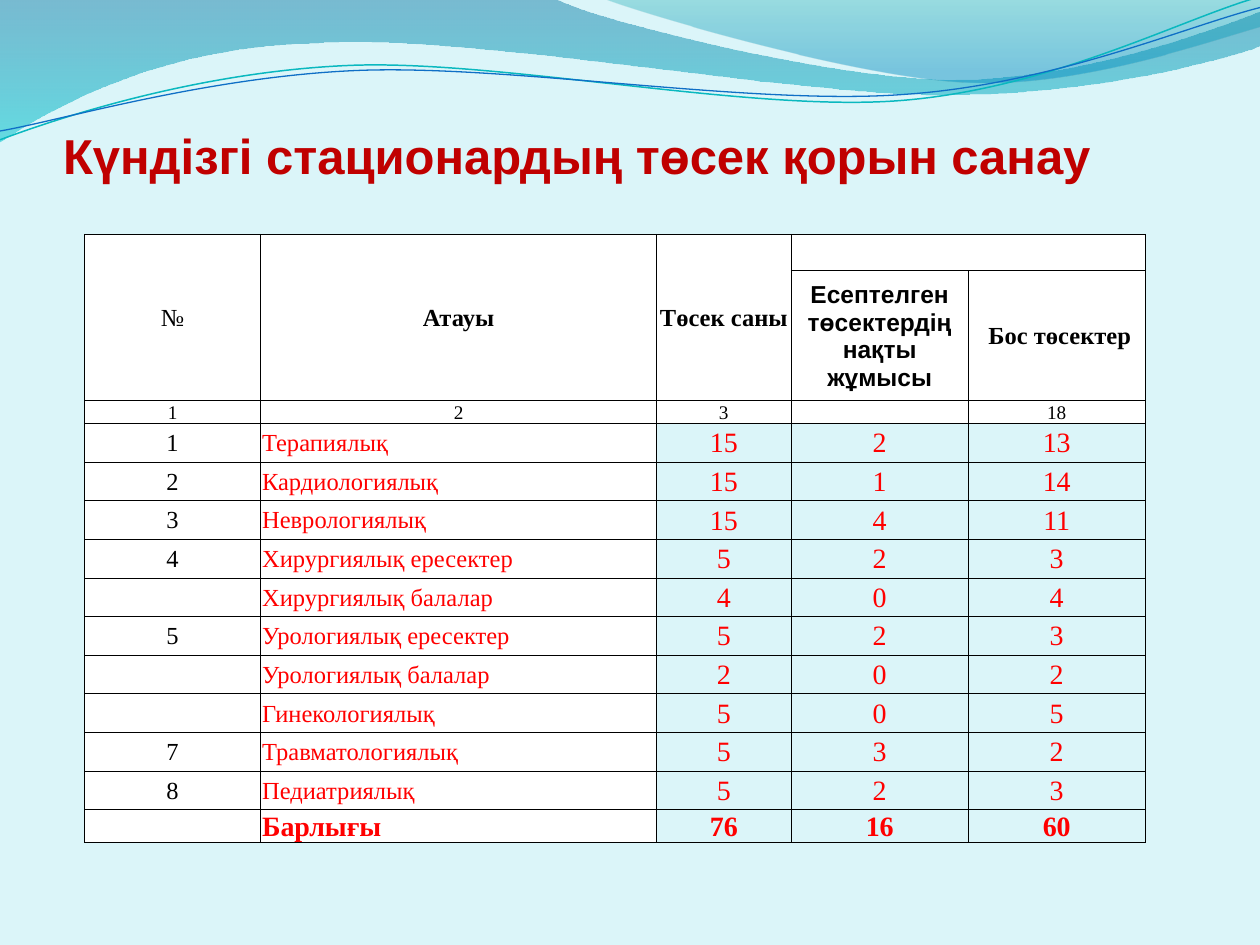
"""Build the slide that counts the bed stock of a day hospital."""
from lxml.etree import SubElement
from pptx import Presentation
from pptx.dml.color import RGBColor as Rgb
from pptx.enum.text import MSO_ANCHOR as Anchor, PP_ALIGN as Align
from pptx.oxml.ns import qn
from pptx.util import Inches, Pt

COLORS = {
    "page": "DBF5F9", "white": "FFFFFF", "ink": "000000", "title": "C00000", "red": "FF0000",
    "deep": "0074A1", "aqua": "00C6CF", "teal": "00A1A9", "sky": "008BBF",
    "teal line": "0AB8BF", "blue line": "0F6FC6",
}
SERIF, SANS = "Times New Roman", "Arial"
GRID_COLUMNS, GRID_ROWS = 100, 75

LEFT_WAVE = [
    (0, 0), (44, -0.1), (47.6, 1.7, 66.4, 6.3, 75.8, 6.3), (85.3, 6.3, 95.8, 2.6, 100, 0.9),
    (100.1, 3.6), (98.3, 4.4, 87, 7.6, 74.6, 7.5), (62.2, 7.5, 38.2, 2.8, 25.7, 3.4),
    (12.9, 3.6, 4.6, 8.3, -0.1, 11.3),
]
RIGHT_WAVE = [
    (47.9, -0.1), (50.9, 1.1, 68.2, 6.2, 76.9, 6.5), (85.6, 6.9, 96.1, 3.2, 100, 2.1), (100, 0),
]
TEAL_CURVE = [
    (0, 11.1), (4.8, 9.3, 15.8, 5.7, 27.7, 5.2), (39.5, 4.7, 59.3, 8.9, 71.3, 8),
    (83.3, 7.1, 93.8, 1.5, 99.8, -0.2),
]
BLUE_CURVE = [
    (0, 10.4), (4.7, 9.6, 16.4, 6.1, 28.3, 5.6), (40.3, 5.1, 59.7, 8.4, 71.7, 7.5),
    (83.6, 6.7, 94.1, 2.1, 100, 0.6),
]

HEADINGS = [
    ["№", "Атауы", "Төсек саны ", "", ""],
    ["", "", "", "Есептелген төсектердің нақты жұмысы", " Бос төсектер"],
    ["1", "2", "3", "", "18"],
]
WARDS = [
    ["1", "Терапиялық", "15", "2", "13"],
    ["2", "Кардиологиялық", "15", "1", "14"],
    ["3", "Неврологиялық", "15", "4", "11"],
    ["4", "Хирургиялық ересектер", "5", "2", "3"],
    ["", "Хирургиялық балалар", "4", "0", "4"],
    ["5", "Урологиялық ересектер", "5", "2", "3"],
    ["", "Урологиялық балалар", "2", "0", "2"],
    ["", "Гинекологиялық", "5", "0", "5"],
    ["7", "Травматологиялық", "5", "3", "2"],
    ["8", "Педиатриялық", "5", "2", "3"],
]
TOTAL = ["", "Барлығы", "76", "16", "60"]
TABLE_ROWS = HEADINGS + WARDS + [TOTAL]
NUMBER_ROW, FIRST_WARD, TOTAL_ROW = 2, len(HEADINGS), len(TABLE_ROWS) - 1
COLUMN_WIDTHS = [14, 31.4, 10.7, 14.05, 14.05]
ROW_HEIGHTS = [2.9, 10.3, 1.8] + [3.07] * len(WARDS) + [2.5]


def bed_style(row, column):
    """Return size, font, colour and weight for one cell of the bed table."""
    if row < NUMBER_ROW:
        return 14, SANS if (row, column) == (1, 3) else SERIF, "ink", column > 0
    if row == NUMBER_ROW:
        return 11, SERIF, "ink", False
    big = column > 1 or (row == TOTAL_ROW and column == 1)
    return 16 if big else 14, SERIF, "red" if column else "ink", row == TOTAL_ROW


class Slide:
    """Hold the style and the current slide, measured on a grid of columns and rows."""

    def __init__(self, deck):
        self.page = deck.slides.add_slide(deck.slide_layouts[5])
        self.column = deck.slide_width / GRID_COLUMNS
        self.row = deck.slide_height / GRID_ROWS
        self.page.background.fill.solid()
        self.page.background.fill.fore_color.rgb = self.color("page")

    def color(self, name):
        """Look up a named colour."""
        return Rgb.from_string(COLORS[name])

    def box(self, left, top, width, height):
        """Turn grid units into lengths."""
        return (round(left * self.column), round(top * self.row),
                round(width * self.column), round(height * self.row))

    def style(self, paragraph, size, font, color, bold):
        """Format every run of a paragraph."""
        for span in paragraph.runs:
            span.font.size, span.font.name, span.font.bold = Pt(size), font, bold
            span.font.color.rgb = self.color(color)

    def outline(self, segments, closed):
        """Draw a freeform from lines (two numbers) and cubic curves (six numbers)."""
        points = [(segment[i] * self.column, segment[i + 1] * self.row)
                  for segment in segments for i in range(0, len(segment), 2)]
        builder = self.page.shapes.build_freeform(*points[0])
        builder.add_line_segments(points[1:], close=closed)
        shape = builder.convert_to_shape()
        shape.shadow.inherit = False
        lines = shape._element.spPr.iter(qn("a:lnTo"))
        lines = iter(list(lines))
        for segment in segments[1:]:
            group = [next(lines) for _ in range(len(segment) // 2)]
            if len(group) == 3:
                bend = SubElement(group[0].getparent(), qn("a:cubicBezTo"))
                group[0].addprevious(bend)
                for line in group:
                    bend.append(line[0])
                    line.getparent().remove(line)
        return shape

    def wave(self, segments, stops):
        """Draw a closed wave with a see-through vertical gradient."""
        shape = self.outline(segments, True)
        shape.line.fill.background()
        shape.fill.gradient()
        shape.fill.gradient_angle = 270
        for stop, (position, color, _) in zip(shape.fill.gradient_stops, stops):
            stop.position, stop.color.rgb = position, self.color(color)
        for paint, (_, _, opacity) in zip(shape._element.spPr.iter(qn("a:srgbClr")), stops):
            SubElement(paint, qn("a:alpha"), val=str(opacity * 1000))

    def curve(self, segments, color, width):
        """Draw an open curved line."""
        shape = self.outline(segments, False)
        shape.fill.background()
        shape.line.color.rgb, shape.line.width = self.color(color), Pt(width)

    def title(self, text, place):
        """Fill and place the title in front of the waves."""
        box = self.page.shapes.title
        self.page.shapes._spTree.append(box._element)
        box.left, box.top, box.width, box.height = self.box(*place)
        frame = box.text_frame
        frame.text, frame.vertical_anchor, frame.word_wrap = text, Anchor.BOTTOM, True
        frame.margin_left = frame.margin_right = frame.margin_bottom = 0
        frame.margin_top = Inches(0.05)
        frame.paragraphs[0].alignment = Align.LEFT
        self.style(frame.paragraphs[0], 28, SANS, "title", True)

    def border(self, cell, width):
        """Draw a thin line on all four sides of a cell."""
        for side in ("lnL", "lnR", "lnT", "lnB"):
            line = SubElement(cell._tc.get_or_add_tcPr(), qn(f"a:{side}"), w=str(Pt(width)))
            SubElement(SubElement(line, qn("a:solidFill")), qn("a:srgbClr"), val=COLORS["ink"])

    def cell(self, cell, text, look, align, filled):
        """Fill and format one table cell."""
        self.border(cell, 0.5)
        cell.margin_left = cell.margin_right = cell.margin_top = Inches(0.01)
        cell.margin_bottom = 0
        cell.text_frame.text, cell.vertical_anchor = text, Anchor.MIDDLE
        paragraph = cell.text_frame.paragraphs[0]
        paragraph.alignment = align
        self.style(paragraph, *look)
        if not text:
            end = SubElement(paragraph._p, qn("a:endParaRPr"), sz=str(look[0] * 100))
            SubElement(end, qn("a:latin"), typeface=look[1])
        if filled:
            cell.fill.solid()
            cell.fill.fore_color.rgb = self.color("white")
        else:
            cell.fill.background()

    def bed_table(self, left, top):
        """Draw the table of wards and beds."""
        place = self.box(left, top, sum(COLUMN_WIDTHS), sum(ROW_HEIGHTS))
        table = self.page.shapes.add_table(len(TABLE_ROWS), len(COLUMN_WIDTHS), *place).table
        table.first_row = table.horz_banding = False
        for column, width in zip(table.columns, COLUMN_WIDTHS):
            column.width = round(width * self.column)
        for row, height in zip(table.rows, ROW_HEIGHTS):
            row.height = round(height * self.row)
        for row, texts in enumerate(TABLE_ROWS):
            for column, text in enumerate(texts):
                ward_name = row >= FIRST_WARD and column == 1
                self.cell(table.cell(row, column), text, bed_style(row, column),
                          Align.LEFT if ward_name else Align.CENTER,
                          row < FIRST_WARD or column < 2)
        for column in range(3):
            table.cell(0, column).merge(table.cell(1, column))
        table.cell(0, 3).merge(table.cell(0, 4))


def main():
    """Build and save the deck."""
    deck = Presentation()
    deck.slide_width, deck.slide_height = Inches(10), Inches(7.5)
    slide = Slide(deck)
    slide.wave(LEFT_WAVE, [(0, "deep", 45), (1, "aqua", 55)])
    slide.wave(RIGHT_WAVE, [(0, "teal", 30), (0.8, "sky", 45)])
    slide.curve(TEAL_CURVE, "teal line", 0.85)
    slide.curve(BLUE_CURVE, "blue line", 0.75)
    slide.title("Күндізгі стационардың төсек қорын санау", (5, 10, 90, 4.6))
    slide.bed_table(6.7, 18.6)
    deck.save("out.pptx")


if __name__ == "__main__":
    main()
